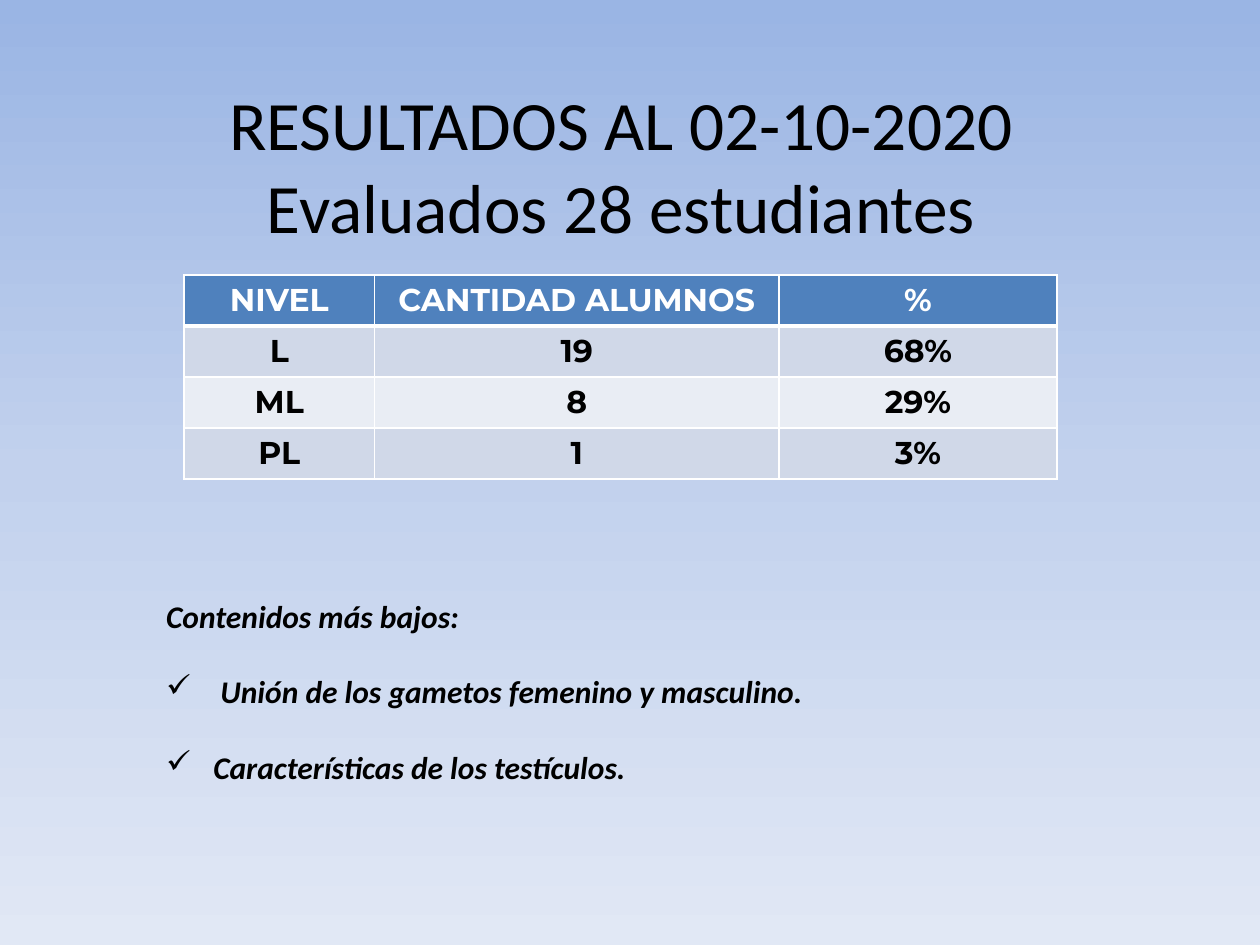
from lxml import etree
from pptx import Presentation
from pptx import util as u
from pptx.dml.color import RGBColor
from pptx.enum import text
from pptx.oxml.ns import qn

BLACK, WHITE, HEADER = "000000", "FFFFFF", "4F81BD"
BANDS = ["D0D8E8", "E9EDF4"]
SKY = [(0, "9AB5E4"), (50, "C2D1ED"), (100, "E1E8F5")]
LEVELS = [
    ("NIVEL", "CANTIDAD ALUMNOS", "%"),
    ("L", "19", "68%"),
    ("ML", "8", "29%"),
    ("PL", "1", "3%"),
]
LOWEST = [" Unión de los gametos femenino y masculino.",
          "Características de los testículos."]


def paint(color_format, color):
    color_format.rgb = RGBColor.from_string(color)


def style(font, color, **values):
    for name, value in values.items():
        setattr(font, name, value)
    paint(font.color, color)


def place(shape, box):
    for name, value in zip(("left", "top", "width", "height"), box):
        setattr(shape, name, u.Cm(value))


def add_background(slide):
    fill = slide.background.fill
    fill.gradient()
    fill.gradient_angle = 270  # top to bottom
    stops = slide.background._cSld.find(".//" + qn("a:gsLst"))
    for stop in list(stops):
        stops.remove(stop)
    for position, color in SKY:
        stop = etree.SubElement(stops, qn("a:gs"), pos=str(position * 1000))
        etree.SubElement(stop, qn("a:srgbClr"), val=color)


def add_border(cell, side, points):
    line = etree.SubElement(cell._tc.get_or_add_tcPr(), qn("a:ln" + side),
                            w=str(u.Pt(points)))
    fill = etree.SubElement(line, qn("a:solidFill"))
    etree.SubElement(fill, qn("a:srgbClr"), val=WHITE)


def add_title(slide, box):
    title = slide.shapes.title
    place(title, box)
    frame = title.text_frame
    frame.text = "RESULTADOS AL 02-10-2020\vEvaluados 28 estudiantes"
    frame.auto_size = text.MSO_AUTO_SIZE.NONE
    frame.vertical_anchor = text.MSO_ANCHOR.MIDDLE
    heading = frame.paragraphs[0]
    heading.alignment = text.PP_ALIGN.CENTER
    for run in heading.runs:
        style(run.font, BLACK, name="Calibri", size=u.Pt(39.6))


def add_levels(slide, box, widths):
    levels = slide.shapes.add_table(len(LEVELS), len(widths),
                                    *map(u.Cm, box)).table
    for column, width in zip(levels.columns, widths):
        column.width = u.Cm(width)
    for r, values in enumerate(LEVELS):
        for c, value in enumerate(values):
            cell = levels.cell(r, c)
            # Thick rule between the header and the body
            for side in "LRTB":
                thick = (r, side) in ((0, "B"), (1, "T"))
                add_border(cell, side, 3 if thick else 1)
            cell.fill.solid()
            paint(cell.fill.fore_color, BANDS[(r - 1) % 2] if r else HEADER)
            cell.text = value
            entry = cell.text_frame.paragraphs[0]
            entry.alignment = text.PP_ALIGN.CENTER
            style(entry.runs[0].font, BLACK if r else WHITE,
                  name="Montserrat", size=u.Pt(18), bold=True)


def add_lowest(slide, box):
    frame = slide.shapes.add_textbox(*map(u.Cm, box)).text_frame
    frame.word_wrap = True
    frame.text = "\n".join(["Contenidos más bajos:"] + LOWEST)
    for i, item in enumerate(frame.paragraphs):
        style(item.runs[0].font, BLACK, name="Calibri", size=u.Pt(18),
              bold=True, italic=True)
        if i:
            item.space_before = u.Pt(21.5)
            props = item._p.get_or_add_pPr()
            props.set("marL", str(u.Cm(0.95)))
            props.set("indent", str(u.Cm(-0.95)))
            etree.SubElement(props, qn("a:buChar"), char="✓")


def main():
    deck = Presentation()
    deck.slide_width, deck.slide_height = u.Cm(25.4), u.Cm(19.05)
    slide = deck.slides.add_slide(deck.slide_layouts[5])  # title only
    add_background(slide)
    add_title(slide, (1.09, 1.73, 22.86, 3.18))
    add_levels(slide, (3.71, 5.54, 17.6, 4.12), (3.84, 8.15, 5.61))
    add_lowest(slide, (3.1, 11.91, 19.81, 4.11))
    deck.save("out.pptx")


if __name__ == "__main__":
    main()
